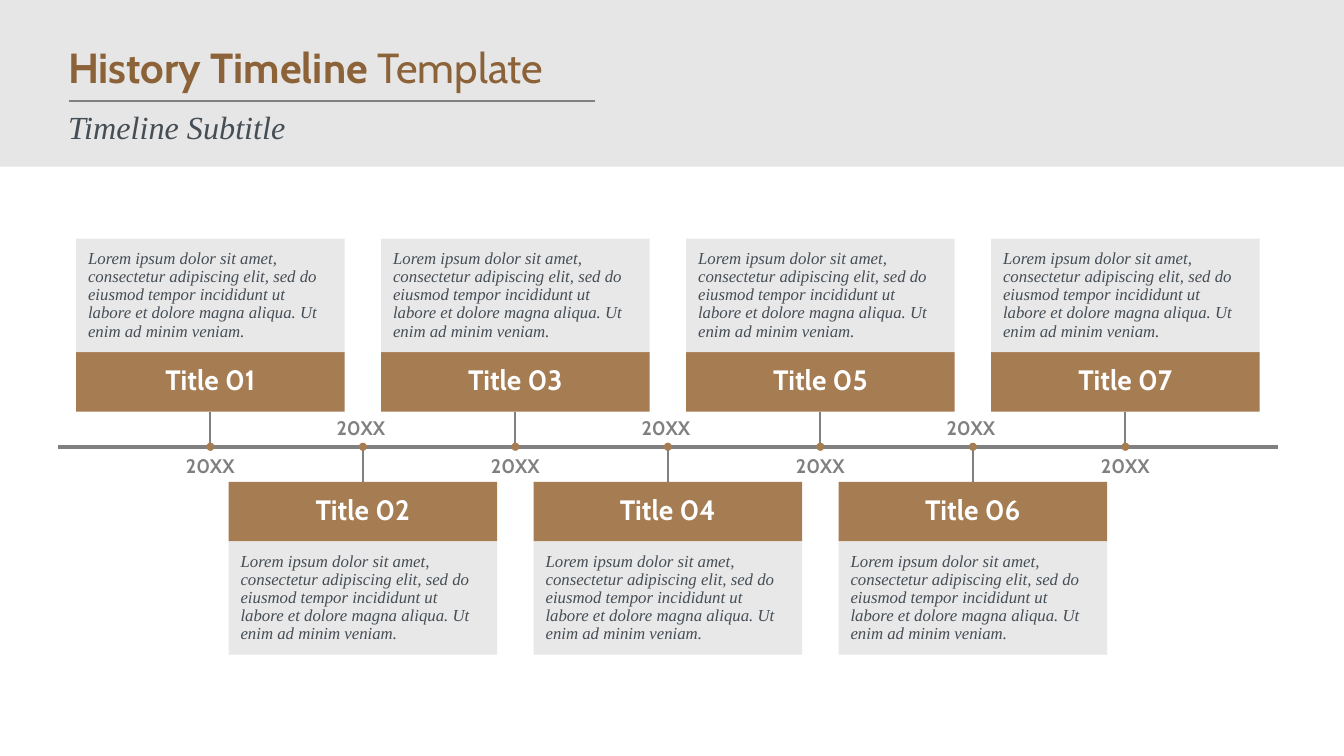
from lxml.etree import SubElement
from pptx import Presentation
from pptx.dml.color import RGBColor
from pptx.enum.shapes import MSO_CONNECTOR as Connector, MSO_SHAPE as Shape
from pptx.enum.text import MSO_ANCHOR as Anchor, PP_ALIGN as Align
from pptx.oxml.ns import qn
from pptx.util import Pt

COLORS = {
    "panel": "E6E6E6",
    "accent": "A67C52",
    "heading": "8C6239",
    "text": "454D55",
    "line": "808080",
    "white": "FFFFFF",
}
SANS = "Cabin"
SERIF = "Times New Roman"
LOREM = (
    "Lorem ipsum dolor sit amet, consectetur adipiscing elit, sed do eiusmod "
    "tempor incididunt ut labore et dolore magna aliqua. Ut enim ad minim veniam."
)

SLIDE_WIDTH, SLIDE_HEIGHT = 960, 540
EVENTS = 7
FIRST_CENTER, PITCH = 150.25, 108.93
CARD_WIDTH, TITLE_HEIGHT, BODY_HEIGHT = 191.8, 42.5, 81
AXIS_Y, STEM = 319.1, 25.1
DOT = 5.8
YEAR_WIDTH, YEAR_HEIGHT, YEAR_OFFSET = 52, 24.5, 13.6


class TimelineSlide:
    def __init__(self, slide):
        self.shapes = slide.shapes

    def color(self, name):
        return RGBColor.from_string(COLORS[name])

    def block(self, kind, left, top, width, height, fill, opacity=100):
        block = self.shapes.add_shape(kind, Pt(left), Pt(top), Pt(width), Pt(height))
        block.shadow.inherit = False
        block.line.fill.background()
        block.fill.solid()
        block.fill.fore_color.rgb = self.color(fill)
        if opacity < 100:
            tint = block._element.spPr.find(qn("a:solidFill"))[0]
            SubElement(tint, qn("a:alpha"), val=str(opacity * 1000))
        return block

    def label(self, left, top, width, height):
        return self.shapes.add_textbox(Pt(left), Pt(top), Pt(width), Pt(height))

    def set_text(self, holder, words, size, font, color, bold=None, italic=None,
                 align=Align.LEFT, anchor=Anchor.MIDDLE, inset=None, spacing=0.9):
        frame = holder.text_frame
        frame.word_wrap = True
        frame.vertical_anchor = anchor
        if inset is not None:
            frame.margin_left = frame.margin_right = Pt(inset)
            frame.margin_top = frame.margin_bottom = Pt(inset)
        paragraph = frame.paragraphs[0]
        paragraph.alignment = align
        paragraph.line_spacing = spacing
        paragraph.font.size = Pt(size)
        paragraph.font.name = font
        paragraph.font.color.rgb = self.color(color)
        paragraph.font.bold = bold
        paragraph.font.italic = italic
        paragraph.add_run().text = words
        return paragraph

    def line(self, x1, y1, x2, y2, weight):
        line = self.shapes.add_connector(
            Connector.STRAIGHT, Pt(x1), Pt(y1), Pt(x2), Pt(y2))
        line.line.color.rgb = self.color("line")
        line.line.width = Pt(weight)
        SubElement(line._element.spPr, qn("a:effectLst"))
        return line

    def header(self):
        self.block(Shape.RECTANGLE, 0, 0, SLIDE_WIDTH, 119, "panel")
        self.line(49.1, 72, 425, 72, 1.5)
        heading = self.set_text(self.label(41.5, 21.6, 843, 56.9),
                                "History Timeline ", 30, SANS, "heading")
        heading.runs[0].font.bold = True
        heading.add_run().text = "Template"
        self.set_text(self.label(41.5, 76.3, 843, 32.4), "Timeline Subtitle", 23,
                      SERIF, "text", italic=True, anchor=Anchor.TOP)

    def event(self, index):
        center = FIRST_CENTER + index * PITCH
        left = center - CARD_WIDTH / 2
        above = index % 2 == 0
        if above:
            title_top = AXIS_Y - STEM - TITLE_HEIGHT
            body_top = title_top - BODY_HEIGHT
            card_edge, side = AXIS_Y - STEM, 2
        else:
            title_top = AXIS_Y + STEM
            body_top = title_top + TITLE_HEIGHT
            card_edge, side = title_top, 0

        title = self.block(Shape.RECTANGLE, left, title_top, CARD_WIDTH,
                           TITLE_HEIGHT, "accent")
        self.set_text(title, f"Title {index + 1:02}", 20, SANS, "white", bold=True,
                      align=Align.CENTER, inset=8)
        body = self.block(Shape.RECTANGLE, left, body_top, CARD_WIDTH,
                          BODY_HEIGHT, "panel", opacity=90)
        self.set_text(body, LOREM, 12, SERIF, "text", italic=True, inset=8.6)

        stem = self.line(center, card_edge, center, AXIS_Y, 1.5)
        stem.begin_connect(title, side)
        self.block(Shape.OVAL, center - DOT / 2, AXIS_Y - DOT / 2, DOT, DOT, "accent")

        year_center = center if above else center - 1.4
        year_middle = AXIS_Y + (YEAR_OFFSET if above else -YEAR_OFFSET)
        year = self.label(year_center - YEAR_WIDTH / 2, year_middle - YEAR_HEIGHT / 2,
                          YEAR_WIDTH, YEAR_HEIGHT)
        self.set_text(year, "20XX", 14, SANS, "line", bold=True,
                      align=Align.CENTER, spacing=1.0)


def main():
    deck = Presentation()
    deck.slide_width, deck.slide_height = Pt(SLIDE_WIDTH), Pt(SLIDE_HEIGHT)
    timeline = TimelineSlide(deck.slides.add_slide(deck.slide_layouts[6]))
    timeline.header()
    timeline.line(41.3, AXIS_Y, 912.8, AXIS_Y, 3)
    for index in range(EVENTS):
        timeline.event(index)
    deck.save("out.pptx")


if __name__ == "__main__":
    main()
